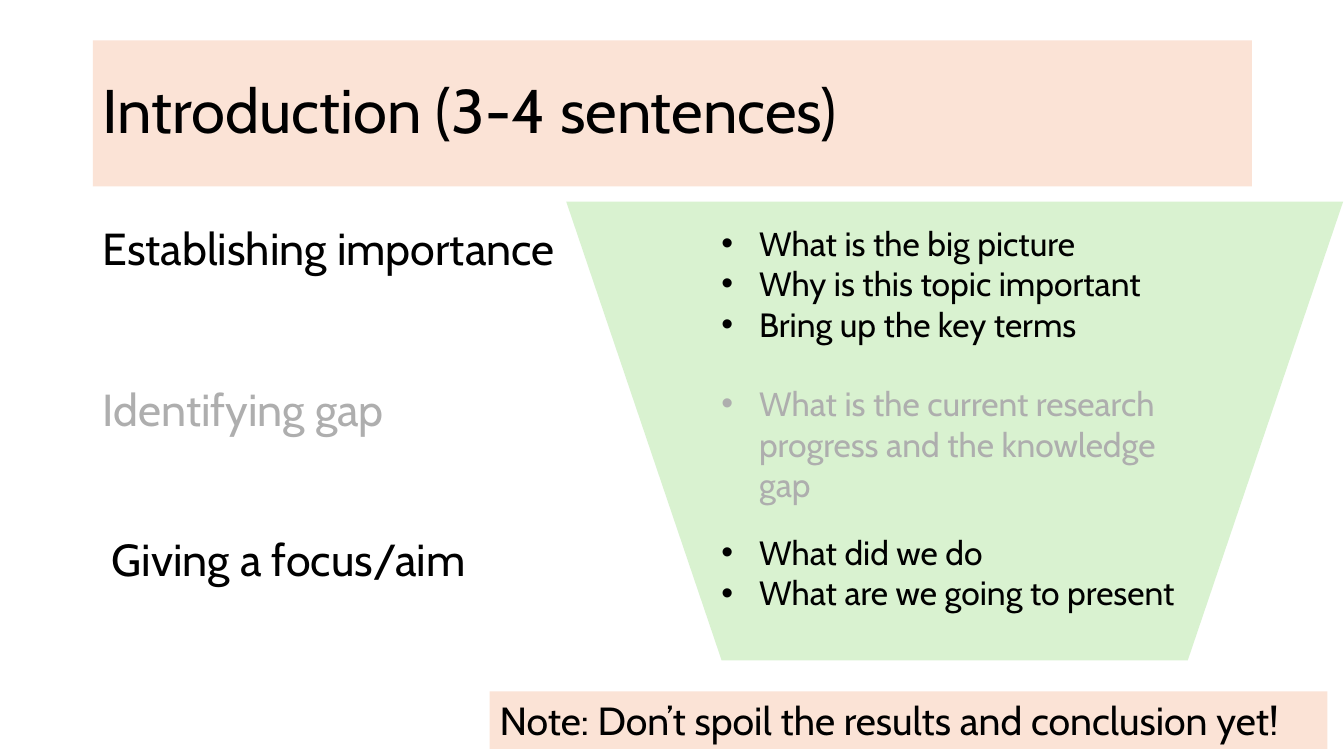
from lxml.etree import SubElement
from pptx import Presentation
from pptx.dml.color import RGBColor
from pptx.enum.shapes import MSO_SHAPE as Preset
from pptx.enum.text import MSO_ANCHOR as Anchor, PP_ALIGN as Align
from pptx.oxml.ns import qn
from pptx.util import Cm, Pt

BLACK, GRAY = "000000", "AEAEAE"
PEACH, GREEN = "FBE3D6", "D9F2D0"


def paint(fill, color):
    fill.solid()
    fill.fore_color.rgb = RGBColor.from_string(color)


def add_text(lines, left, top, width, height, size=24, color=BLACK,
             background=None, anchor=Anchor.TOP, spacing=1.0, bullets=False):
    box = slide.shapes.add_textbox(Cm(left), Cm(top), Cm(width), Cm(height))
    if background:
        paint(box.fill, background)
    frame = box.text_frame
    frame.word_wrap = True
    frame.vertical_anchor = anchor
    frame.text = "\n".join(lines)
    for paragraph in frame.paragraphs:
        paragraph.alignment = Align.LEFT
        paragraph.line_spacing = spacing
        font = paragraph.runs[0].font
        font.name = "Cabin"
        font.size = Pt(size)
        paint(font.fill, color)
        if bullets:
            properties = paragraph._p.get_or_add_pPr()
            properties.set("marL", str(Cm(0.95)))
            properties.set("indent", str(-Cm(0.95)))
            SubElement(properties, qn("a:buFont"), typeface="Arial")
            SubElement(properties, qn("a:buChar"), char="•")


presentation = Presentation()
presentation.slide_width = Cm(33.87)
presentation.slide_height = Cm(19.05)
slide = presentation.slides.add_slide(presentation.slide_layouts[6])

# Funnel
funnel = slide.shapes.add_shape(Preset.FLOWCHART_MANUAL_OPERATION,
                                Cm(14.27), Cm(5.08), Cm(19.58), Cm(11.56))
funnel.shadow.inherit = False
paint(funnel.fill, GREEN)
funnel.line.fill.background()

# Title
add_text(["Introduction (3-4 sentences)"], 2.34, 1.02, 29.21, 3.68, size=44,
         background=PEACH, anchor=Anchor.MIDDLE, spacing=0.9)

# Steps: heading, its left and top, colour, top and size of its points, points
steps = [
    ("Establishing importance", 2.34, 5.44, BLACK, 5.49, 11.3, 3.33,
     ["What is the big picture", "Why is this topic important",
      "Bring up the key terms"]),
    ("Identifying gap", 2.34, 9.5, GRAY, 9.53, 11.94, 3.33,
     ["What is the current research progress and the knowledge gap"]),
    ("Giving a focus/aim", 2.57, 13.28, BLACK, 13.28, 16.94, 2.31,
     ["What did we do", "What are we going to present"]),
]
for heading, left, top, color, points_top, width, height, points in steps:
    add_text([heading], left, top, 12.45, 1.63, size=32, color=color)
    add_text(points, 17.93, points_top, width, height, color=color, bullets=True)

# Note
add_text(["Note: Don’t spoil the results and conclusion yet!"],
         12.34, 17.42, 21.11, 1.45, size=28, background=PEACH)

presentation.save("out.pptx")
